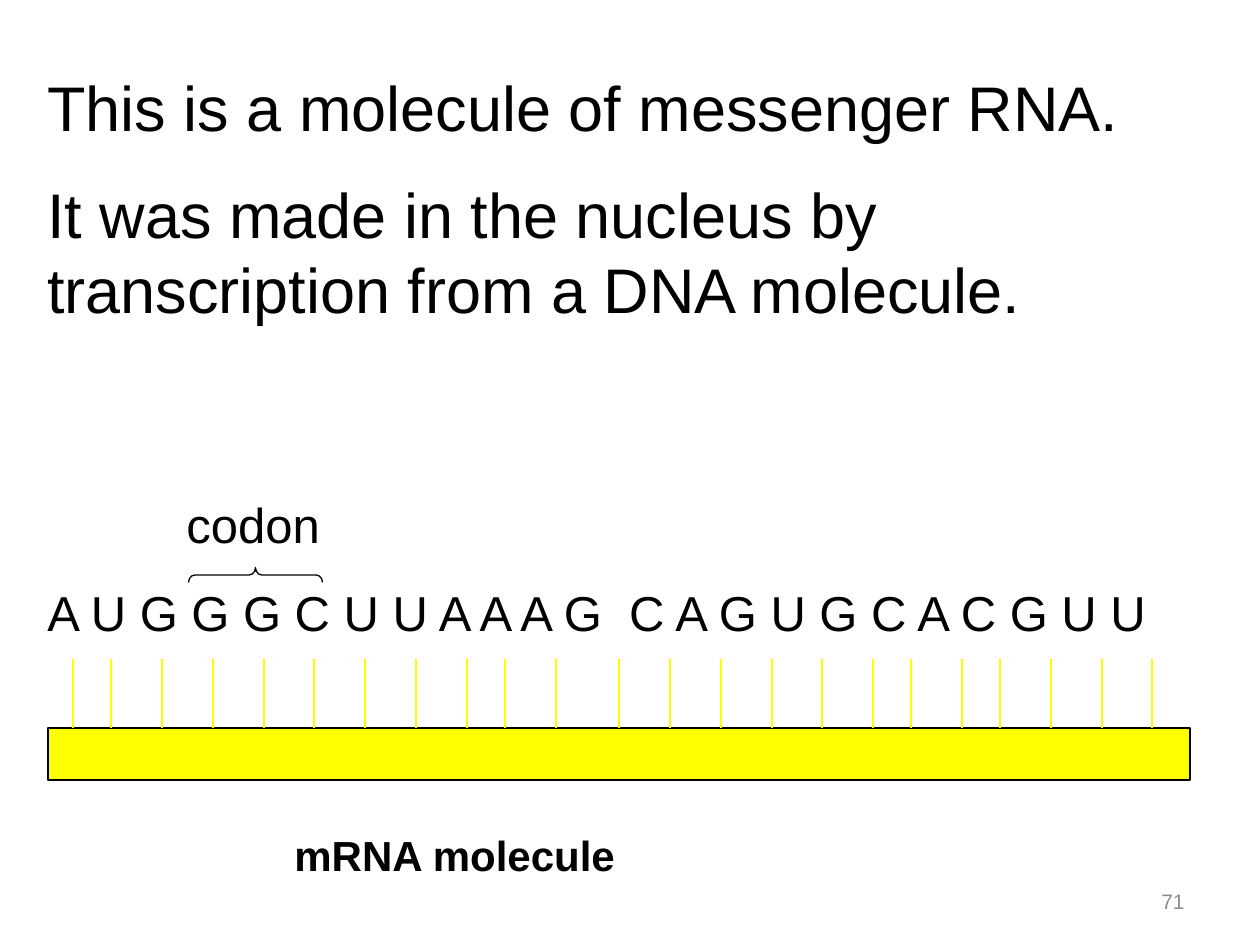
from dataclasses import dataclass
from itertools import accumulate

from lxml.etree import SubElement
from pptx import Presentation
from pptx.dml.color import RGBColor
from pptx.enum.shapes import MSO_CONNECTOR, MSO_SHAPE
from pptx.enum.text import MSO_ANCHOR, PP_ALIGN
from pptx.oxml.ns import qn
from pptx.util import Pt

PX_PER_INCH = 126


def px(length):
    return round(length * 914400 / PX_PER_INCH)


@dataclass(frozen=True)
class Theme:
    font: str = "Arial"
    ink: RGBColor = RGBColor(0x00, 0x00, 0x00)
    strand: RGBColor = RGBColor(0xFF, 0xFF, 0x00)
    muted: RGBColor = RGBColor(0x8C, 0x8C, 0x8C)
    body: int = 36
    label: int = 28
    caption: int = 24
    footer: int = 12
    line: float = 0.75


class SlideBuilder:
    def __init__(self, page, theme):
        self.page = page
        self.theme = theme

    def text(self, text, left, top, width, height, size, color=None, bold=False,
             align=PP_ALIGN.LEFT, anchor=MSO_ANCHOR.TOP, drop=0):
        """Add a text box; each line of text becomes a paragraph."""
        box = self.page.shapes.add_textbox(px(left), px(top), px(width), px(height))
        frame = box.text_frame
        frame.word_wrap = True
        frame.vertical_anchor = anchor
        frame.margin_top = px(6 + drop)
        for index, line in enumerate(text.split("\n")):
            para = frame.add_paragraph() if index else frame.paragraphs[0]
            para.alignment = align
            if index:
                para.space_before = Pt(size / 2)
            span = para.add_run()
            span.text = line
            span.font.name = self.theme.font
            span.font.size = Pt(size)
            span.font.bold = bold
            span.font.color.rgb = color or self.theme.ink
        return box

    def shape(self, kind, left, top, width, height, fill=None):
        shape = self.page.shapes.add_shape(kind, px(left), px(top), px(width), px(height))
        shape.shadow.inherit = False
        if fill is None:
            shape.fill.background()
        else:
            shape.fill.solid()
            shape.fill.fore_color.rgb = fill
        shape.line.color.rgb = self.theme.ink
        shape.line.width = Pt(self.theme.line)
        return shape

    def tick(self, x, top, bottom):
        line = self.page.shapes.add_connector(
            MSO_CONNECTOR.STRAIGHT, px(x), px(top), px(x), px(bottom))
        line.line.color.rgb = self.theme.strand
        line.line.width = Pt(self.theme.line)
        SubElement(line._element.spPr, qn("a:effectLst"))
        return line


def main():
    deck = Presentation()
    deck.slide_width, deck.slide_height = px(1260), px(945)
    page = deck.slides.add_slide(deck.slide_layouts[6])
    theme = Theme()
    slide = SlideBuilder(page, theme)

    # mRNA strand and its bases
    bar_left, bar_top, bar_width = 48, 728, 1142
    bar = slide.shape(MSO_SHAPE.RECTANGLE, bar_left, bar_top, bar_width, 52, theme.strand)
    slide.text("A U G G G C U U A A A G  C A G U G C A C G U U",
               35, 572, 1181, 217, theme.label, drop=5)

    # One tick per base, in steps of a tenth of an inch
    steps = [3] + [4] * 7 + [3, 4, 5] + [4] * 5 + [3, 4, 3] + [4] * 3
    for offset in accumulate(steps, initial=0):
        x = round(73 + 12.7 * offset)
        tick = slide.tick(x, 659, bar_top)
        if x == bar_left + bar_width // 2:
            tick.end_connect(bar, 0)

    # Labels and codon brace
    slide.text("mRNA molecule", 282, 820, 446, 63, theme.caption, bold=True, drop=4)
    brace = slide.shape(MSO_SHAPE.RIGHT_BRACE, 248, 508, 15, 134)
    brace.rotation = 270
    brace.adjustments[0] = 0.42
    brace.adjustments[1] = 0.5
    slide.text("codon", 174, 483, 233, 72, theme.label, drop=5)

    # Explanation and page number
    slide.text("This is a molecule of messenger RNA.\n"
               "It was made in the nucleus by transcription from a DNA molecule.",
               35, 55, 1181, 297, theme.body, drop=7)
    slide.text("71", 903, 876, 294, 50, theme.footer, color=theme.muted,
               align=PP_ALIGN.RIGHT, anchor=MSO_ANCHOR.MIDDLE)

    deck.save("out.pptx")


if __name__ == "__main__":
    main()
